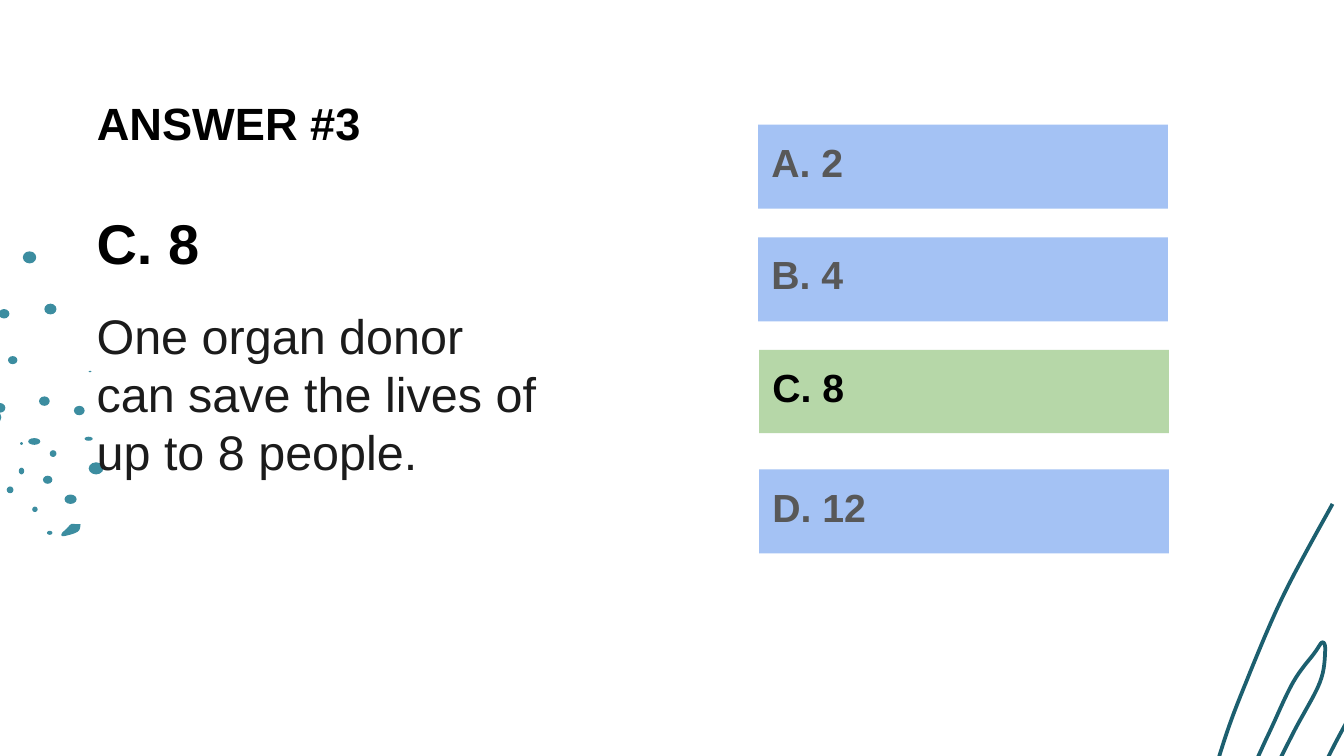
from dataclasses import dataclass

from pptx import Presentation
from pptx.dml.color import RGBColor
from pptx.enum.shapes import MSO_SHAPE
from pptx.enum.text import MSO_ANCHOR, PP_ALIGN
from pptx.shapes.autoshape import Shape
from pptx.slide import Slide
from pptx.text.text import TextFrame
from pptx.util import Emu, Inches, Pt

# Grid: square cells, 100 columns across the 16:9 slide
SLIDE_WIDTH = Inches(10)
SLIDE_HEIGHT = Emu(SLIDE_WIDTH * 9 // 16)
CELL = SLIDE_WIDTH / 100
FONT = "Arial"
BLACK, BODY_GREY, OPTION_GREY = "000000", "1B1B1B", "585858"
BLUE, GREEN = "A4C2F4", "B6D7A8"
LIGHT_TEAL, DARK_TEAL = "3C8DA0", "1C5F6F"

Point = tuple[float, float]


@dataclass(frozen=True)
class Area:
    col: float
    row: float
    cols: float
    rows: float

    def emu(self) -> list[Emu]:
        return [cells(n) for n in (self.col, self.row, self.cols, self.rows)]


@dataclass(frozen=True)
class Option:
    label: str
    area: Area
    fill: str = BLUE
    ink: str = OPTION_GREY


OPTIONS = [
    Option("A. 2", Area(56.4, 9.28, 30.5, 6.25)),
    Option("B. 4", Area(56.4, 17.66, 30.5, 6.25)),
    Option("C. 8", Area(56.48, 26.04, 30.5, 6.2), GREEN, BLACK),
    Option("D. 12", Area(56.48, 34.93, 30.5, 6.25)),
]

SPLASH_DOTS = [
    Area(-1.2, 30.5, 1.3, 1.1), Area(1.5, 32.9, 0.2, 0.2),
    Area(1.4, 34.8, 0.4, 0.5), Area(2.4, 37.7, 0.4, 0.4),
    Area(3.5, 39.5, 0.4, 0.3), Area(4.8, 36.8, 0.9, 0.7),
    Area(3.2, 35.4, 0.7, 0.6), Area(0.5, 36.2, 0.5, 0.5),
    Area(3.7, 33.5, 0.5, 0.5), Area(2.1, 32.6, 0.9, 0.5),
    Area(2.9, 29.5, 0.8, 0.7), Area(-0.3, 30, 0.7, 0.7),
    Area(0.6, 26.5, 0.7, 0.6), Area(-0.1, 23, 0.8, 0.7),
    Area(6.6, 27.6, 0.2, 0.1), Area(5.5, 30.2, 0.8, 0.7),
    Area(6.3, 32.5, 0.6, 0.3), Area(6.6, 34.4, 1.1, 0.9),
    Area(3.3, 22.6, 0.9, 0.8), Area(1.7, 18.7, 1, 0.9),
]
SPLASH_DROP = [(5.6, 39), (5.3, 39), (4.95, 39.35), (4.6, 39.7), (4.7, 39.9),
               (5.5, 39.7), (5.9, 39.45), (6, 39)]

# Grass-like pen stroke that bleeds off the lower right corner
SCRIBBLE = [
    (99.15, 37.5), (95.4, 44.5), (92.3, 51.8), (90.9, 55.7), (90.6, 57.2),
    (91, 58.5), (91.8, 58.7), (92.8, 57.9), (94.4, 54.6), (96.2, 50.8),
    (97.8, 48.6), (98.4, 47.8), (98.6, 48.5), (98.2, 50.8), (96.3, 54.4),
    (94.4, 58.2), (93.6, 60), (93, 61.4), (93.2, 63.6), (94.5, 63.8),
    (95.7, 63), (96.6, 61.2), (97.4, 59.3), (99.2, 55.6), (101.1, 52.1),
]


def cells(count: float) -> Emu:
    return Emu(round(count * CELL))


def color(hex_code: str) -> RGBColor:
    return RGBColor.from_string(hex_code)


def paint(shape: Shape, fill: str) -> None:
    shape.shadow.inherit = False
    shape.fill.solid()
    shape.fill.fore_color.rgb = color(fill)
    shape.line.fill.background()


def smooth_curve(knots: list[Point], steps: int = 8) -> list[Point]:
    """Catmull-Rom curve through the knots."""
    padded = [knots[0], *knots, knots[-1]]
    curve = [knots[0]]
    for a, b, c, d in zip(padded, padded[1:], padded[2:], padded[3:]):
        for step in range(1, steps + 1):
            t = step / steps
            curve.append(tuple(
                q + t / 2 * (r - p + t * (2 * p - 5 * q + 4 * r - s
                                          + t * (3 * q - p - 3 * r + s)))
                for p, q, r, s in zip(a, b, c, d)))
    return curve


def add_curve(slide: Slide, knots: list[Point], close: bool) -> Shape:
    start, *rest = [(cells(x), cells(y)) for x, y in smooth_curve(knots)]
    builder = slide.shapes.build_freeform(*start)
    builder.add_line_segments(rest, close=close)
    return builder.convert_to_shape()


def add_dot(slide: Slide, area: Area) -> None:
    paint(slide.shapes.add_shape(MSO_SHAPE.OVAL, *area.emu()), LIGHT_TEAL)


def prepare(frame: TextFrame, anchor: MSO_ANCHOR) -> None:
    frame.word_wrap = True
    frame.vertical_anchor = anchor
    frame.margin_left = frame.margin_right = Inches(0.1)
    frame.margin_top = frame.margin_bottom = Inches(0.1)


def write(paragraph, text: str, size: float, ink: str, bold: bool = True) -> None:
    paragraph.text = text
    paragraph.alignment = PP_ALIGN.LEFT
    font = paragraph.font
    font.name, font.size, font.bold = FONT, Pt(size), bold
    font.color.rgb = color(ink)


def add_option(slide: Slide, option: Option) -> None:
    bar = slide.shapes.add_shape(MSO_SHAPE.RECTANGLE, *option.area.emu())
    paint(bar, option.fill)
    prepare(bar.text_frame, MSO_ANCHOR.TOP)
    write(bar.text_frame.paragraphs[0], option.label, 21, option.ink)


def main() -> None:
    deck = Presentation()
    deck.slide_width, deck.slide_height = SLIDE_WIDTH, SLIDE_HEIGHT
    slide = deck.slides.add_slide(deck.slide_layouts[5])

    # Decoration
    paint(add_curve(slide, SPLASH_DROP, close=True), LIGHT_TEAL)
    for dot in SPLASH_DOTS:
        add_dot(slide, dot)
    scribble = add_curve(slide, SCRIBBLE, close=False)
    scribble.shadow.inherit = False
    scribble.fill.background()
    scribble.line.color.rgb = color(DARK_TEAL)
    scribble.line.width = Pt(2)

    # Title
    title = slide.shapes.title
    title.left, title.top, title.width, title.height = Area(6.2, 5.95, 92.6, 6.3).emu()
    prepare(title.text_frame, MSO_ANCHOR.MIDDLE)
    write(title.text_frame.paragraphs[0], "ANSWER #3", 24.2, BLACK)

    # Answer and explanation
    answer = slide.shapes.add_textbox(*Area(6.2, 14.55, 35.2, 38.4).emu()).text_frame
    prepare(answer, MSO_ANCHOR.TOP)
    write(answer.paragraphs[0], "C. 8", 30, BLACK)
    explanation = answer.add_paragraph()
    write(explanation, "One organ donor can save the lives of up to 8 people.",
          26, BODY_GREY, bold=False)
    explanation.space_before = Pt(16)

    # Options
    for option in OPTIONS:
        add_option(slide, option)

    deck.save("out.pptx")


if __name__ == "__main__":
    main()
